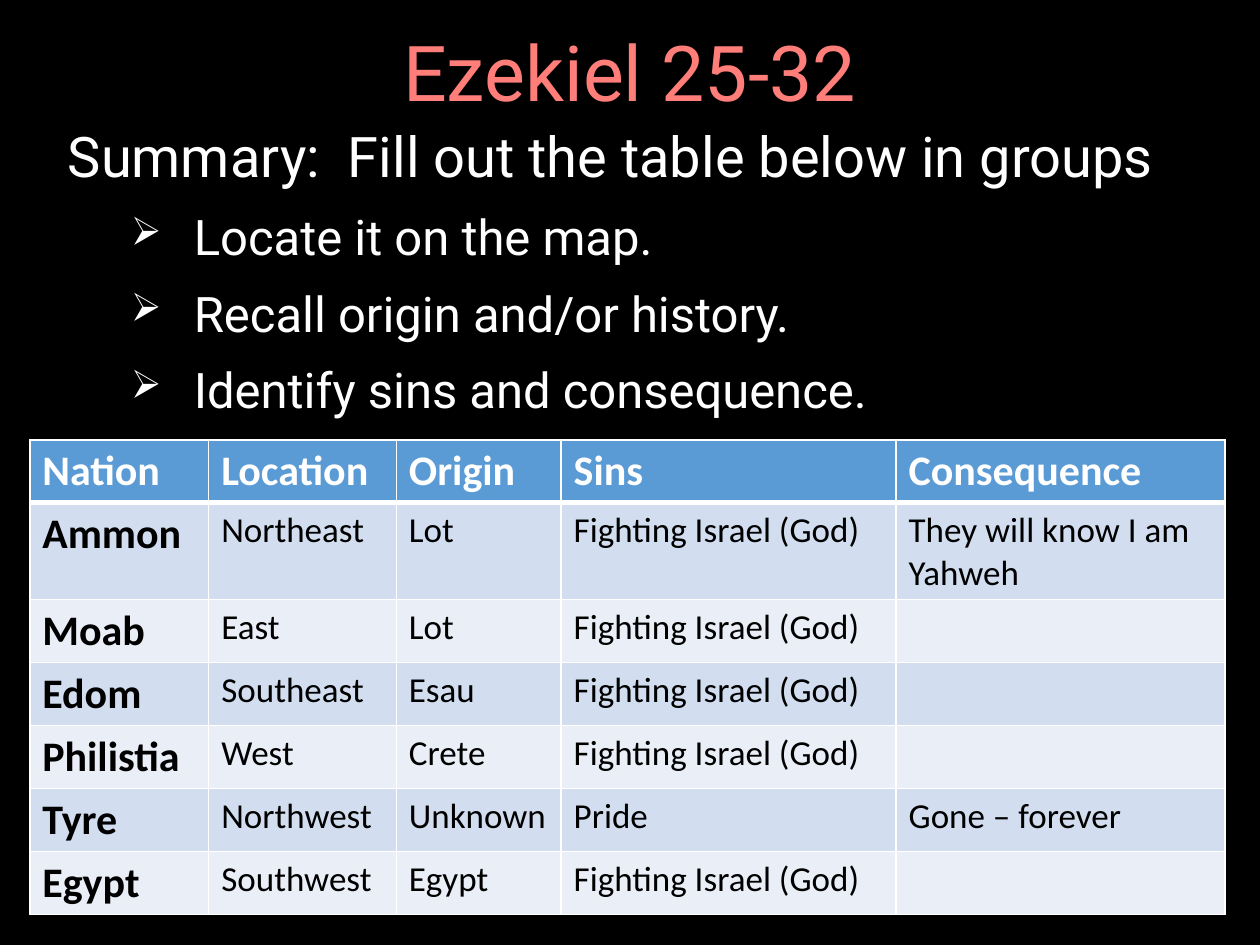
from typing import NamedTuple

from lxml.etree import SubElement
from pptx import Presentation
from pptx.dml.color import RGBColor
from pptx.enum.text import MSO_ANCHOR, MSO_AUTO_SIZE, PP_ALIGN
from pptx.oxml import parse_xml
from pptx.oxml.ns import nsdecls, qn
from pptx.util import Pt

BLACK = RGBColor(0x00, 0x00, 0x00)
WHITE = RGBColor(0xFF, 0xFF, 0xFF)
CORAL = RGBColor(0xFF, 0x7E, 0x79)
HEADER_BLUE = RGBColor(0x5B, 0x9B, 0xD5)
BAND_DARK = RGBColor(0xD2, 0xDE, 0xEF)
BAND_LIGHT = RGBColor(0xEA, 0xEF, 0xF7)

HEADING_FONT = "Roboto"
TABLE_FONT = "Calibri"
THIN, THICK = 1, 3


class Nation(NamedTuple):
    name: str
    location: str
    origin: str
    sins: str
    consequence: str = ""


HEADER = Nation("Nation", "Location", "Origin", "Sins", "Consequence")
FIGHTING = "Fighting Israel (God)"
NATIONS = [
    Nation("Ammon", "Northeast", "Lot", FIGHTING, "They will know I am Yahweh"),
    Nation("Moab", "East", "Lot", FIGHTING),
    Nation("Edom", "Southeast", "Esau", FIGHTING),
    Nation("Philistia", "West", "Crete", FIGHTING),
    Nation("Tyre", "Northwest", "Unknown", "Pride", "Gone – forever"),
    Nation("Egypt", "Southwest", "Egypt", FIGHTING),
]
TASKS = [
    "Locate it on the map.",
    "Recall origin and/or history.",
    "Identify sins and consequence.",
]
COLUMN_WIDTHS = [102.3, 107.2, 94.2, 191.4, 188.1]
ROW_HEIGHT = 29.5


def add_run(paragraph, text: str, size: float, font: str, color: RGBColor,
            bold: bool = False) -> None:
    run = paragraph.add_run()
    run.text = text
    run.font.size = Pt(size)
    run.font.name = font
    run.font.color.rgb = color
    run.font.bold = bold


def add_title(slide) -> None:
    title = slide.shapes.title
    title.left, title.top, title.width, title.height = Pt(49.7), Pt(11.5), Pt(620.6), Pt(64.8)
    frame = title.text_frame
    frame.auto_size = MSO_AUTO_SIZE.NONE
    frame.vertical_anchor = MSO_ANCHOR.MIDDLE
    paragraph = frame.paragraphs[0]
    paragraph.alignment = PP_ALIGN.CENTER
    paragraph.line_spacing = 0.9
    add_run(paragraph, "Ezekiel 25-32", 44, HEADING_FONT, CORAL)


def set_arrow_bullet(paragraph) -> None:
    properties = paragraph._p.get_or_add_pPr()
    properties.set("marL", str(Pt(72)))
    properties.set("indent", str(Pt(-36)))
    SubElement(properties, qn("a:buSzPct"), val="80000")
    SubElement(properties, qn("a:buChar"), char="➢")


def add_summary(slide) -> None:
    box = slide.shapes.add_textbox(Pt(31.7), Pt(66.2), Pt(671.8), Pt(194.4))
    frame = box.text_frame
    frame.word_wrap = True
    summary = frame.paragraphs[0]
    summary.space_after = Pt(6)
    add_run(summary, "Summary:  Fill out the table below in groups", 32, HEADING_FONT, WHITE)
    for task in TASKS:
        paragraph = frame.add_paragraph()
        paragraph.level = 1
        set_arrow_bullet(paragraph)
        paragraph.space_before = Pt(4)
        paragraph.space_after = Pt(6)
        add_run(paragraph, task, 28, HEADING_FONT, WHITE)


def set_borders(cell, top: float, bottom: float) -> None:
    """Draw white borders; the line elements must come before the fill."""
    properties = cell._tc.get_or_add_tcPr()
    widths = {"lnL": THIN, "lnR": THIN, "lnT": top, "lnB": bottom}
    for position, (side, width) in enumerate(widths.items()):
        properties.insert(position, parse_xml(
            f'<a:{side} {nsdecls("a")} w="{Pt(width)}"><a:solidFill>'
            f'<a:srgbClr val="{WHITE}"/></a:solidFill></a:{side}>'))


def fill_row(table, row: int, nation: Nation) -> None:
    is_header = row == 0
    fill = HEADER_BLUE if is_header else (BAND_LIGHT, BAND_DARK)[row % 2]
    for column, text in enumerate(nation):
        cell = table.cell(row, column)
        cell.fill.solid()
        cell.fill.fore_color.rgb = fill
        set_borders(cell, THICK if row == 1 else THIN, THICK if is_header else THIN)
        if text:
            bold = is_header or column == 0
            add_run(cell.text_frame.paragraphs[0], text, 24 if bold else 20,
                    TABLE_FONT, WHITE if is_header else BLACK, bold)


def add_nations_table(slide) -> None:
    rows = [HEADER, *NATIONS]
    table = slide.shapes.add_table(
        len(rows), len(COLUMN_WIDTHS), Pt(17), Pt(251.3),
        Pt(sum(COLUMN_WIDTHS)), Pt(ROW_HEIGHT * len(rows))).table
    for column, width in zip(table.columns, COLUMN_WIDTHS):
        column.width = Pt(width)
    for index, nation in enumerate(rows):
        table.rows[index].height = Pt(ROW_HEIGHT)
        fill_row(table, index, nation)


def main() -> None:
    presentation = Presentation()
    presentation.slide_width, presentation.slide_height = Pt(720), Pt(540)
    slide = presentation.slides.add_slide(presentation.slide_layouts.get_by_name("Title Only"))
    slide.background.fill.solid()
    slide.background.fill.fore_color.rgb = BLACK
    add_title(slide)
    add_summary(slide)
    add_nations_table(slide)
    presentation.save("out.pptx")


if __name__ == "__main__":
    main()
